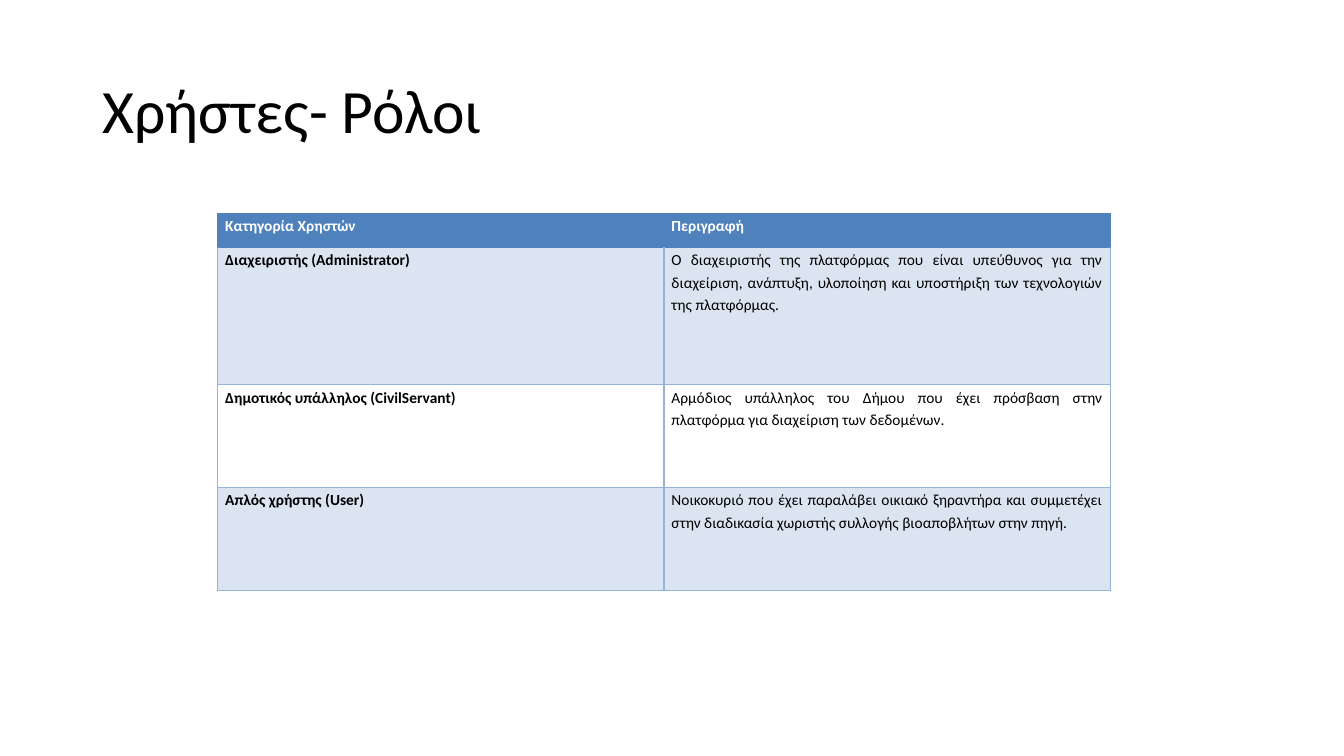
from lxml.etree import SubElement
from pptx import Presentation
from pptx.dml.color import RGBColor
from pptx.enum.text import MSO_ANCHOR as Anchor, PP_ALIGN as Align
from pptx.oxml.ns import qn
from pptx.util import Pt

FONT = "Calibri"
COLORS = {
    "text": "000000",
    "header_text": "FFFFFF",
    "header": "4F81BD",
    "band": "DBE5F1",
    "border": "95B3D7",
}
ROLES = [
    ("Κατηγορία Χρηστών", "Περιγραφή"),
    ("Διαχειριστής (Administrator)",
     "Ο διαχειριστής της πλατφόρμας που είναι υπεύθυνος για την διαχείριση, "
     "ανάπτυξη, υλοποίηση και υποστήριξη των τεχνολογιών της πλατφόρμας."),
    ("Δημοτικός υπάλληλος (CivilServant)",
     "Αρμόδιος υπάλληλος του Δήμου που έχει πρόσβαση στην πλατφόρμα για "
     "διαχείριση των δεδομένων."),
    ("Απλός χρήστης (User)",
     "Νοικοκυριό που έχει παραλάβει οικιακό ξηραντήρα και συμμετέχει στην "
     "διαδικασία χωριστής συλλογής βιοαποβλήτων στην πηγή."),
]
ROW_HEIGHTS = [24.5, 98, 73.5, 73.5]
COLUMN_WIDTH = 318.75


def write_text(text_frame, text, size, color="text", bold=False,
               align=Align.LEFT, line_spacing=1.0):
    paragraph = text_frame.paragraphs[0]
    paragraph.alignment = align
    paragraph.line_spacing = line_spacing
    run = paragraph.add_run()
    run.text = text
    run.font.name = FONT
    run.font.size = Pt(size)
    run.font.bold = bold
    run.font.color.rgb = RGBColor.from_string(COLORS[color])


def add_title(slide, text):
    box = slide.shapes.add_textbox(Pt(66), Pt(28.75), Pt(828), Pt(104.4))
    box.text_frame.word_wrap = True
    box.text_frame.vertical_anchor = Anchor.MIDDLE
    write_text(box.text_frame, text, size=44, line_spacing=0.9)


def set_borders(cell, colors):
    properties = cell._tc.get_or_add_tcPr()
    for side, color in colors.items():
        line = SubElement(properties, qn(f"a:ln{side}"), w=str(Pt(1)))
        fill = SubElement(line, qn("a:solidFill"))
        SubElement(fill, qn("a:srgbClr"), val=COLORS[color])


def format_cell(cell, text, row, column):
    is_header = row == 0
    edge = "header" if is_header else "border"
    top = "header" if row <= 1 else "border"
    set_borders(cell, {"L": edge, "R": edge, "T": top, "B": edge})
    if row == 2:
        cell.fill.background()
    else:
        cell.fill.solid()
        fill_color = COLORS["header" if is_header else "band"]
        cell.fill.fore_color.rgb = RGBColor.from_string(fill_color)
    cell.margin_left = cell.margin_right = Pt(5.4)
    cell.margin_top = cell.margin_bottom = Pt(0)
    write_text(cell.text_frame, text, size=11,
               color="header_text" if is_header else "text",
               bold=is_header or column == 0,
               align=Align.JUSTIFY, line_spacing=Pt(16))


def add_roles_table(slide):
    frame = slide.shapes.add_table(
        len(ROLES), 2, Pt(155.5), Pt(152.4),
        Pt(2 * COLUMN_WIDTH), Pt(sum(ROW_HEIGHTS)))
    table = frame.table
    table.horz_banding = False
    for column in table.columns:
        column.width = Pt(COLUMN_WIDTH)
    for row, (height, texts) in enumerate(zip(ROW_HEIGHTS, ROLES)):
        table.rows[row].height = Pt(height)
        for column, text in enumerate(texts):
            format_cell(table.cell(row, column), text, row, column)


def main():
    presentation = Presentation()
    presentation.slide_width = Pt(960)
    presentation.slide_height = Pt(540)
    slide = presentation.slides.add_slide(presentation.slide_layouts[6])
    add_title(slide, "Χρήστες- Ρόλοι")
    add_roles_table(slide)
    presentation.save("out.pptx")


if __name__ == "__main__":
    main()
